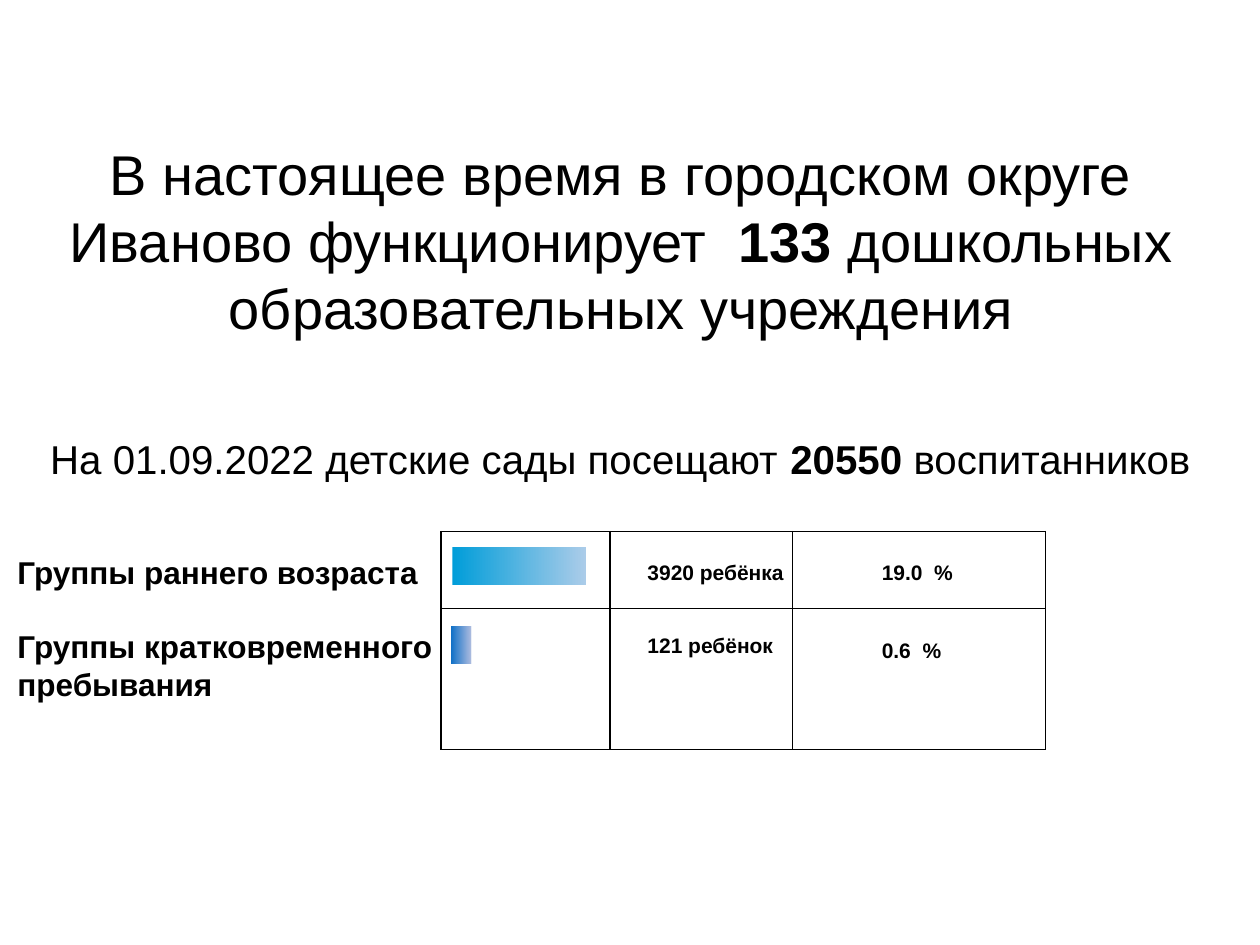
"""Build the slide on kindergarten enrolment in the Ivanovo city district."""
from dataclasses import dataclass

from lxml import etree
from pptx import Presentation
from pptx import util as u
from pptx.dml.color import RGBColor
from pptx.enum import shapes, text
from pptx.oxml import ns

BLACK = RGBColor(0x00, 0x00, 0x00)
CYAN = RGBColor(0x00, 0x9D, 0xD9)
PALE_CYAN = RGBColor(0xAB, 0xCC, 0xE9)
BLUE = RGBColor(0x0F, 0x6F, 0xC6)
PALE_BLUE = RGBColor(0xAB, 0xBB, 0xDF)

FONT = "Arial"
COLUMN_WIDTHS = (1.34, 1.45, 2.01)
ROW_HEIGHTS = (0.61, 1.12)


@dataclass(frozen=True)
class Box:
    left: float
    top: float
    width: float
    height: float

    def lengths(self) -> tuple:
        return tuple(u.Inches(v) for v in (self.left, self.top, self.width, self.height))


@dataclass(frozen=True)
class Group:
    name: str
    name_box: Box
    bar_box: Box
    bar_colors: tuple
    children: str
    children_top: float
    share: str
    share_top: float


GROUPS = (
    Group("Группы раннего возраста", Box(0.04, 4.34, 3.54, 0.4),
          Box(3.59, 4.34, 1.06, 0.3), (CYAN, PALE_CYAN),
          "3920 ребёнка", 4.39, "19.0  %", 4.39),
    Group("Группы кратковременного пребывания", Box(0.04, 4.93, 3.62, 0.71),
          Box(3.58, 4.97, 0.16, 0.3), (BLUE, PALE_BLUE),
          "121 ребёнок", 4.97, "0.6  %", 5.01),
)


def style_run(run, size: float, bold: bool) -> None:
    run.font.name = FONT
    run.font.size = u.Pt(size)
    run.font.bold = bold
    run.font.color.rgb = BLACK


def write_statement(paragraph, before: str, figure: str, after: str, size: float) -> None:
    paragraph.alignment = text.PP_ALIGN.CENTER
    for wording in (before, figure, after):
        run = paragraph.add_run()
        run.text = wording
        style_run(run, size, wording == figure)


def add_text_box(slide, box: Box):
    frame = slide.shapes.add_textbox(*box.lengths()).text_frame
    frame.word_wrap = True
    return frame


def add_label(slide, box: Box, wording: str, size: float) -> None:
    frame = add_text_box(slide, box)
    frame.text = wording
    style_run(frame.paragraphs[0].runs[0], size, True)


def add_bar(slide, box: Box, colors: tuple) -> None:
    bar = slide.shapes.add_shape(shapes.MSO_SHAPE.RECTANGLE, *box.lengths())
    bar.shadow.inherit = False
    bar.line.fill.background()
    bar.fill.gradient()
    bar.fill.gradient_angle = 0
    for stop, color in zip(bar.fill.gradient_stops, colors):
        stop.color.rgb = color


def border_cell(cell) -> None:
    cell.fill.background()
    properties = cell._tc.get_or_add_tcPr()
    for position, side in enumerate(("lnL", "lnR", "lnT", "lnB")):
        line = etree.Element(ns.qn(f"a:{side}"), w=str(u.Pt(1)))
        fill = etree.SubElement(line, ns.qn("a:solidFill"))
        etree.SubElement(fill, ns.qn("a:srgbClr"), val=str(BLACK))
        properties.insert(position, line)


def add_grid(slide) -> None:
    box = Box(3.5, 4.22, sum(COLUMN_WIDTHS), sum(ROW_HEIGHTS))
    grid = slide.shapes.add_table(len(ROW_HEIGHTS), len(COLUMN_WIDTHS), *box.lengths()).table
    grid.first_row = grid.horz_banding = False
    for column, width in zip(grid.columns, COLUMN_WIDTHS):
        column.width = u.Inches(width)
    for row, height in zip(grid.rows, ROW_HEIGHTS):
        row.height = u.Inches(height)
    for cell in grid.iter_cells():
        border_cell(cell)


def add_group(slide, group: Group) -> None:
    add_label(slide, group.name_box, group.name, 18)
    add_bar(slide, group.bar_box, group.bar_colors)
    add_label(slide, Box(5.04, group.children_top, 1.41, 0.3), group.children, 12)
    add_label(slide, Box(6.9, group.share_top, 0.96, 0.3), group.share, 12)


def main() -> None:
    deck = Presentation()
    deck.slide_width, deck.slide_height = u.Inches(10), u.Inches(7.5)
    slide = deck.slides.add_slide(deck.slide_layouts[5])

    title = slide.shapes.title
    title.left, title.top, title.width, title.height = Box(0.43, 0.99, 9, 1.83).lengths()
    title.text_frame.vertical_anchor = text.MSO_ANCHOR.MIDDLE
    write_statement(title.text_frame.paragraphs[0],
                    "В настоящее время в городском округе Иваново функционирует  ",
                    "133", " дошкольных образовательных учреждения", 32)

    add_grid(slide)
    for group in GROUPS:
        add_group(slide, group)

    attendance = add_text_box(slide, Box(0.12, 3.36, 9.61, 0.49)).paragraphs[0]
    attendance.line_spacing = 1.1
    write_statement(attendance, "На 01.09.2022 детские сады посещают ",
                    "20550", " воспитанников", 23)

    deck.save("out.pptx")


if __name__ == "__main__":
    main()
